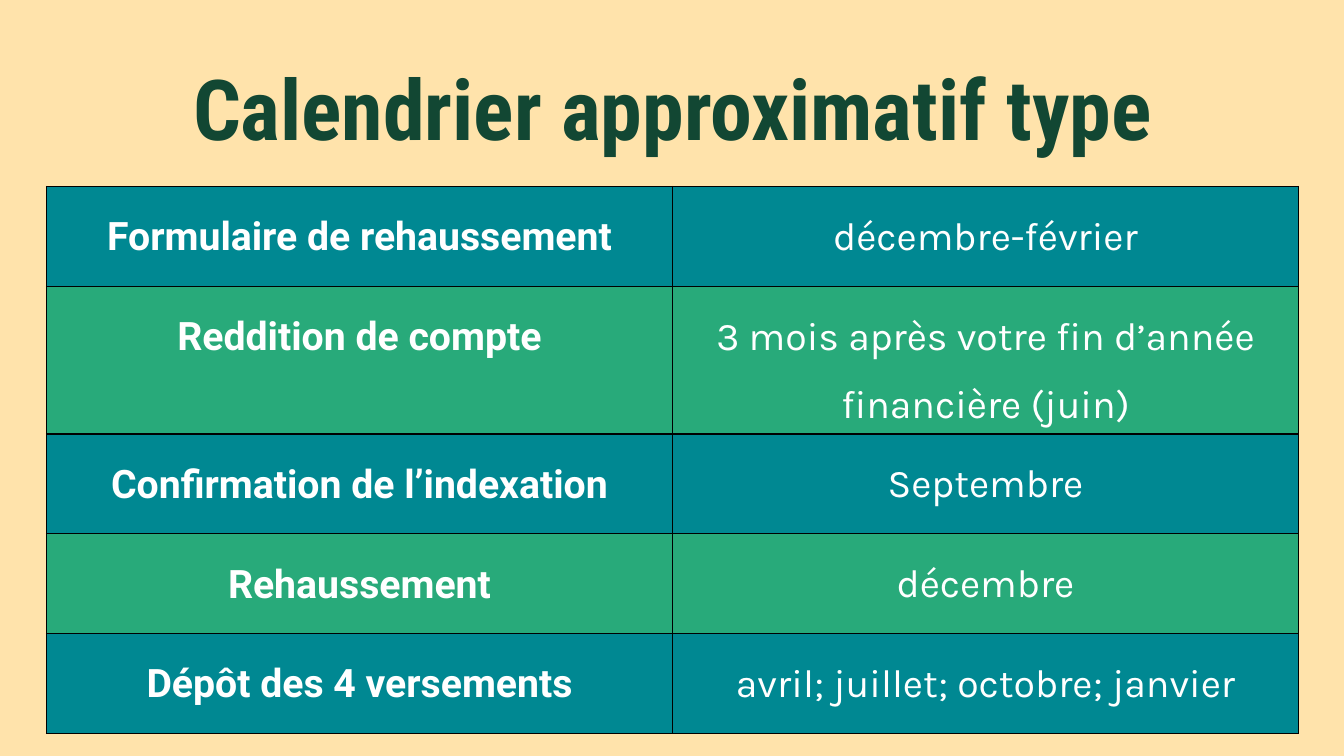
from typing import NamedTuple

from lxml.etree import SubElement
from pptx import Presentation
from pptx.dml.color import RGBColor
from pptx.enum.text import MSO_ANCHOR as Anchor, MSO_AUTO_SIZE as AutoSize, PP_ALIGN as Align
from pptx.oxml.ns import qn
from pptx.util import Inches, Pt

SAND = RGBColor(0xFF, 0xE3, 0xAB)
FOREST = RGBColor(0x12, 0x47, 0x33)
TEAL = RGBColor(0x00, 0x88, 0x92)
GREEN = RGBColor(0x28, 0xAA, 0x7A)
WHITE = RGBColor(0xFF, 0xFF, 0xFF)
BLACK = RGBColor(0x00, 0x00, 0x00)

# Table grid, in inches
LEFT, TOP = 0.46, 1.85
COL_W, ROW_H = 6.21, 0.99


class Step(NamedTuple):
    name: str
    period: str


class ColumnStyle(NamedTuple):
    font: str
    bold: bool


STEPS = [
    Step("Formulaire de rehaussement", "décembre-février"),
    Step("Reddition de compte", "3 mois après votre fin d’année financière (juin)"),
    Step("Confirmation de l’indexation", "Septembre"),
    Step("Rehaussement", "décembre"),
    Step("Dépôt des 4 versements", "avril; juillet; octobre; janvier"),
]
COLUMNS = [ColumnStyle("Roboto", True), ColumnStyle("Karla", False)]


def format_paragraph(p, font: str, size: int, color: RGBColor, bold: bool, spacing: float) -> None:
    p.alignment = Align.CENTER
    p.line_spacing = spacing
    p.font.name = font
    p.font.size = Pt(size)
    p.font.bold = bold
    p.font.color.rgb = color


def add_borders(cell, color: RGBColor, width: float) -> None:
    """Borders must precede the fill in the cell properties."""
    props = cell._tc.get_or_add_tcPr()
    for i, side in enumerate(("lnL", "lnR", "lnT", "lnB")):
        line = SubElement(props, qn(f"a:{side}"), w=str(Pt(width)))
        fill = SubElement(line, qn("a:solidFill"))
        SubElement(fill, qn("a:srgbClr"), val=str(color))
        props.insert(i, line)


def add_title(slide, text: str) -> None:
    title = slide.shapes.title
    title.left, title.top = Inches(0.92), Inches(0.4)
    title.width, title.height = Inches(11.5), Inches(1.45)
    tf = title.text_frame
    tf.text = text
    tf.word_wrap = True
    tf.auto_size = AutoSize.NONE
    tf.vertical_anchor = Anchor.MIDDLE
    format_paragraph(tf.paragraphs[0], "Roboto Condensed", 60, FOREST, True, 0.9)


def add_calendar(slide, steps: list[Step]) -> None:
    table = slide.shapes.add_table(
        len(steps), len(COLUMNS), Inches(LEFT), Inches(TOP),
        Inches(COL_W * len(COLUMNS)), Inches(ROW_H * len(steps))).table
    table.first_row = table.horz_banding = False
    for column in table.columns:
        column.width = Inches(COL_W)
    for r, step in enumerate(steps):
        table.rows[r].height = Inches(ROW_H)
        for c, (text, style) in enumerate(zip(step, COLUMNS)):
            cell = table.cell(r, c)
            cell.text = text
            cell.vertical_anchor = Anchor.TOP
            cell.fill.solid()
            cell.fill.fore_color.rgb = GREEN if r % 2 else TEAL
            add_borders(cell, BLACK, 1)
            format_paragraph(cell.text_frame.paragraphs[0], style.font, 28, WHITE, style.bold, 1.5)


def main() -> None:
    prs = Presentation()
    prs.slide_width, prs.slide_height = Inches(13.33), Inches(7.5)
    slide = prs.slides.add_slide(prs.slide_layouts.get_by_name("Title Only"))
    slide.background.fill.solid()
    slide.background.fill.fore_color.rgb = SAND
    add_calendar(slide, STEPS)
    add_title(slide, "Calendrier approximatif type")
    prs.save("out.pptx")


if __name__ == "__main__":
    main()
